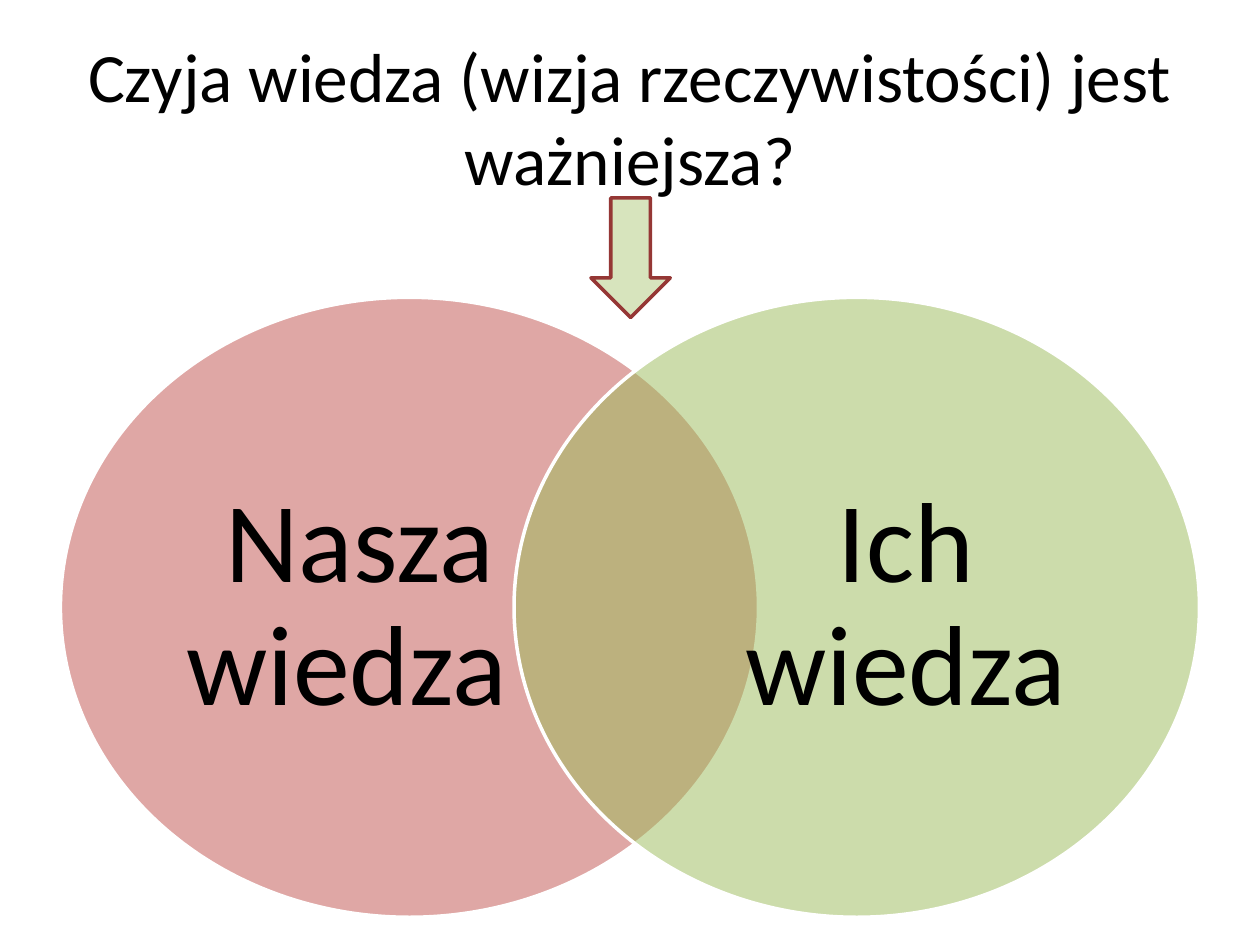
"""Builds a slide with two overlapping circles of knowledge under a question."""
from dataclasses import dataclass

import lxml.etree
import pptx
import pptx.dml.color
import pptx.enum.shapes
import pptx.enum.text
import pptx.oxml.ns
import pptx.util

SLIDE_WIDTH = 10
SLIDE_HEIGHT = 7.5
FONT = "Calibri"
SHAPES = pptx.enum.shapes.MSO_SHAPE


@dataclass(frozen=True)
class Box:
    """Position and size in inches."""
    left: float
    top: float
    width: float
    height: float

    def lengths(self) -> list[int]:
        """Return the four lengths for a shape call."""
        return [pptx.util.Inches(value) for value in (self.left, self.top, self.width, self.height)]


@dataclass(frozen=True)
class Circle:
    """One side of the Venn diagram with its label."""
    left: float
    width: float
    label_left: float
    label_width: float
    fill: str
    label: str


CIRCLES = [
    Circle(0.48, 5.54, 1.26, 3.19, "C0504D", "Nasza wiedza "),
    Circle(4.08, 5.44, 5.62, 3.14, "9BBB59", "Ich wiedza"),
]
CIRCLE_TOP, CIRCLE_HEIGHT = 2.36, 4.92
LABEL_TOP, LABEL_HEIGHT = 2.94, 3.76


def color(value: str) -> pptx.dml.color.RGBColor:
    """Turn a hex string into a colour."""
    return pptx.dml.color.RGBColor.from_string(value)


def add_shape(slide, kind, box: Box, fill: str, line: str, opacity: int = 100):
    """Add a filled and outlined preset shape."""
    shape = slide.shapes.add_shape(kind, *box.lengths())
    shape.shadow.inherit = False
    shape.fill.solid()
    shape.fill.fore_color.rgb = color(fill)
    shape.line.color.rgb = color(line)
    shape.line.width = pptx.util.Pt(2)
    if opacity < 100:
        qualified = pptx.oxml.ns.qn
        fill_color = shape.fill._xPr.find(qualified("a:solidFill")).find(qualified("a:srgbClr"))
        lxml.etree.SubElement(fill_color, qualified("a:alpha")).set("val", str(opacity * 1000))
    return shape


def add_text(slide, box: Box, text: str, size: float, spacing: float = 1.0, inset: bool = True):
    """Add a centred, wrapped text box."""
    shape = slide.shapes.add_textbox(*box.lengths())
    frame = shape.text_frame
    frame.word_wrap = True
    frame.vertical_anchor = pptx.enum.text.MSO_ANCHOR.MIDDLE
    if not inset:
        frame.margin_left = frame.margin_right = frame.margin_top = frame.margin_bottom = 0
    paragraph = frame.paragraphs[0]
    paragraph.alignment = pptx.enum.text.PP_ALIGN.CENTER
    paragraph.line_spacing = spacing
    run = paragraph.add_run()
    run.text = text
    run.font.name = FONT
    run.font.size = pptx.util.Pt(size)
    run.font.color.rgb = color("000000")
    return shape


def add_circle(slide, circle: Circle) -> None:
    """Draw one half-transparent circle and its label."""
    outline = Box(circle.left, CIRCLE_TOP, circle.width, CIRCLE_HEIGHT)
    add_shape(slide, SHAPES.OVAL, outline, circle.fill, "FFFFFF", opacity=50)
    label = Box(circle.label_left, LABEL_TOP, circle.label_width, LABEL_HEIGHT)
    add_text(slide, label, circle.label, 65, spacing=0.9, inset=False)


def main() -> None:
    """Build and save the presentation."""
    presentation = pptx.Presentation()
    presentation.slide_width = pptx.util.Inches(SLIDE_WIDTH)
    presentation.slide_height = pptx.util.Inches(SLIDE_HEIGHT)
    slide = presentation.slides.add_slide(presentation.slide_layouts[6])
    title = Box(SLIDE_WIDTH * 0.05, SLIDE_HEIGHT * 0.04, SLIDE_WIDTH * 0.9, SLIDE_HEIGHT / 6)
    add_text(slide, title, "Czyja wiedza (wizja rzeczywistości) jest ważniejsza?", 39.6)
    for circle in CIRCLES:
        add_circle(slide, circle)
    add_shape(slide, SHAPES.DOWN_ARROW, Box(4.69, 1.57, 0.63, 0.95), "D7E4BD", "953735")
    presentation.save("out.pptx")


if __name__ == "__main__":
    main()
